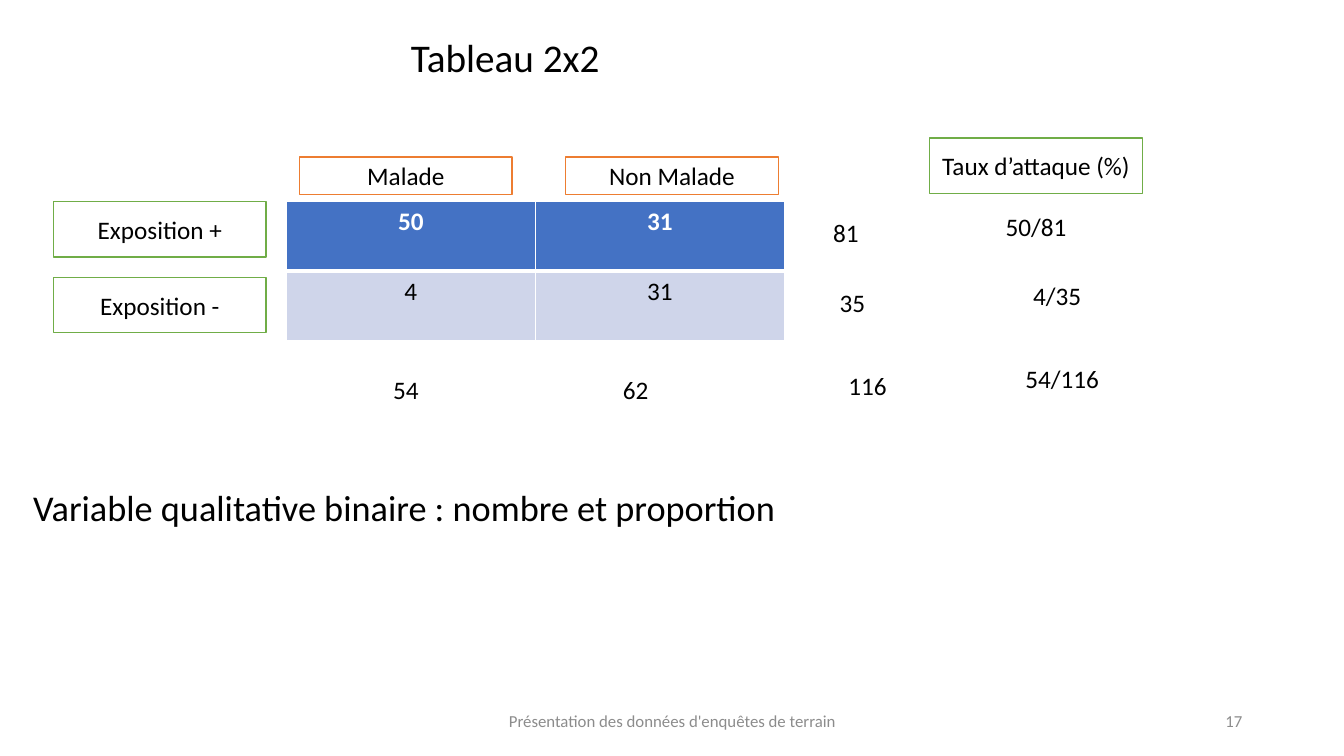
import pptx
import pptx.util
import pptx.dml.color
import pptx.enum.shapes
import pptx.enum.text
import pptx.oxml
import pptx.oxml.ns

Inches = pptx.util.Inches
Pt = pptx.util.Pt
ALIGN = pptx.enum.text.PP_ALIGN
ANCHOR = pptx.enum.text.MSO_ANCHOR

COLORS = {
    "white": "FFFFFF", "black": "000000", "grey": "8C8C8C", "blue": "4472C4",
    "pale_blue": "CFD5EA", "orange": "ED7D31", "green": "70AD47",
}
FONT = "Calibri"

TITLE = ("Tableau 2x2", (1, 0.25, 8.02, 0.69))
COUNTS = [["50", "31"], ["4", "31"]]
COUNTS_BOX = (2.84, 2, 4.94, 1.38)
ROW_STYLES = [("blue", "white", True), ("pale_blue", "black", False)]

LABELS = [
    ("Malade", (2.97, 1.56, 2.11, 0.37), "orange"),
    ("Non Malade", (5.61, 1.56, 2.11, 0.37), "orange"),
    ("Exposition +", (0.53, 2, 2.11, 0.55), "green"),
    ("Exposition -", (0.53, 2.75, 2.11, 0.55), "green"),
    ("Taux d’attaque (%)", (9.22, 1.37, 2.11, 0.55), "green"),
    ("50/81", (9.43, 1.98, 1.69, 0.53), None),
    ("4/35", (9.64, 2.72, 1.69, 0.43), None),
    ("54/116", (9.64, 3.48, 1.79, 0.55), None),
    ("54", (2.97, 3.59, 2.11, 0.55), None),
    ("62", (5.25, 3.59, 2.11, 0.55), None),
    ("81", (7.89, 2.1, 1, 0.42), None),
    ("35", (7.89, 2.72, 1.13, 0.55), None),
    ("116", (7.99, 3.55, 1.23, 0.55), None),
]
NOTES = [
    ("Variable qualitative binaire : nombre et proportion",
     (0.23, 4.71, 8.02, 0.69), 25.9, "black", ALIGN.LEFT, 0.9),
    ("Présentation des données d'enquêtes de terrain",
     (4.42, 6.95, 4.5, 0.4), 12, "grey", ALIGN.CENTER, 1),
    ("17", (9.42, 6.95, 3, 0.4), 12, "grey", ALIGN.RIGHT, 1),
]


def rgb(name):
    return pptx.dml.color.RGBColor.from_string(COLORS[name])


def inches(box):
    return [Inches(length) for length in box]


def write(frame, text, size=18, color="black", align=ALIGN.CENTER,
          bold=False, spacing=1, anchor=ANCHOR.MIDDLE):
    frame.text = text
    frame.word_wrap = True
    frame.vertical_anchor = anchor
    paragraph = frame.paragraphs[0]
    paragraph.alignment = align
    paragraph.line_spacing = spacing
    font = paragraph.runs[0].font
    font.name, font.size, font.bold = FONT, Pt(size), bold
    font.color.rgb = rgb(color)


def add_title(slide):
    text, box = TITLE
    title = slide.shapes.title
    title.left, title.top, title.width, title.height = inches(box)
    title.text_frame.auto_size = pptx.enum.text.MSO_AUTO_SIZE.NONE
    write(title.text_frame, text, size=28, spacing=0.9)


def set_borders(cell, widths):
    properties = cell._tc.get_or_add_tcPr()
    for index, (side, width) in enumerate(widths.items()):
        properties.insert(index, pptx.oxml.parse_xml(
            f'<a:ln{side} {pptx.oxml.ns.nsdecls("a")} w="{Pt(width)}"><a:solidFill>'
            f'<a:srgbClr val="{COLORS["white"]}"/></a:solidFill></a:ln{side}>'))


def add_counts(slide):
    counts = slide.shapes.add_table(
        len(COUNTS), len(COUNTS[0]), *inches(COUNTS_BOX)).table
    for row, (values, (fill, color, bold)) in enumerate(zip(COUNTS, ROW_STYLES)):
        for column, value in enumerate(values):
            cell = counts.cell(row, column)
            write(cell.text_frame, value, color=color, bold=bold, anchor=ANCHOR.TOP)
            cell.fill.solid()
            cell.fill.fore_color.rgb = rgb(fill)
            set_borders(cell, {"L": 1, "R": 1, "T": 3 if row else 1, "B": 1 if row else 3})


def add_label(slide, text, box, outline):
    label = slide.shapes.add_shape(
        pptx.enum.shapes.MSO_SHAPE.RECTANGLE, *inches(box))
    label.shadow.inherit = False
    label.fill.solid()
    label.fill.fore_color.rgb = rgb("white")
    if outline:
        label.line.color.rgb = rgb(outline)
        label.line.width = Pt(1)
    else:
        label.line.fill.background()
    write(label.text_frame, text)


def main():
    presentation = pptx.Presentation()
    presentation.slide_width = Inches(13.33)
    presentation.slide_height = Inches(7.5)
    slide = presentation.slides.add_slide(presentation.slide_layouts[5])
    add_title(slide)
    add_counts(slide)
    for text, box, outline in LABELS:
        add_label(slide, text, box, outline)
    for text, box, size, color, align, spacing in NOTES:
        note = slide.shapes.add_textbox(*inches(box))
        write(note.text_frame, text, size, color, align, spacing=spacing)
    presentation.save("out.pptx")


if __name__ == "__main__":
    main()
